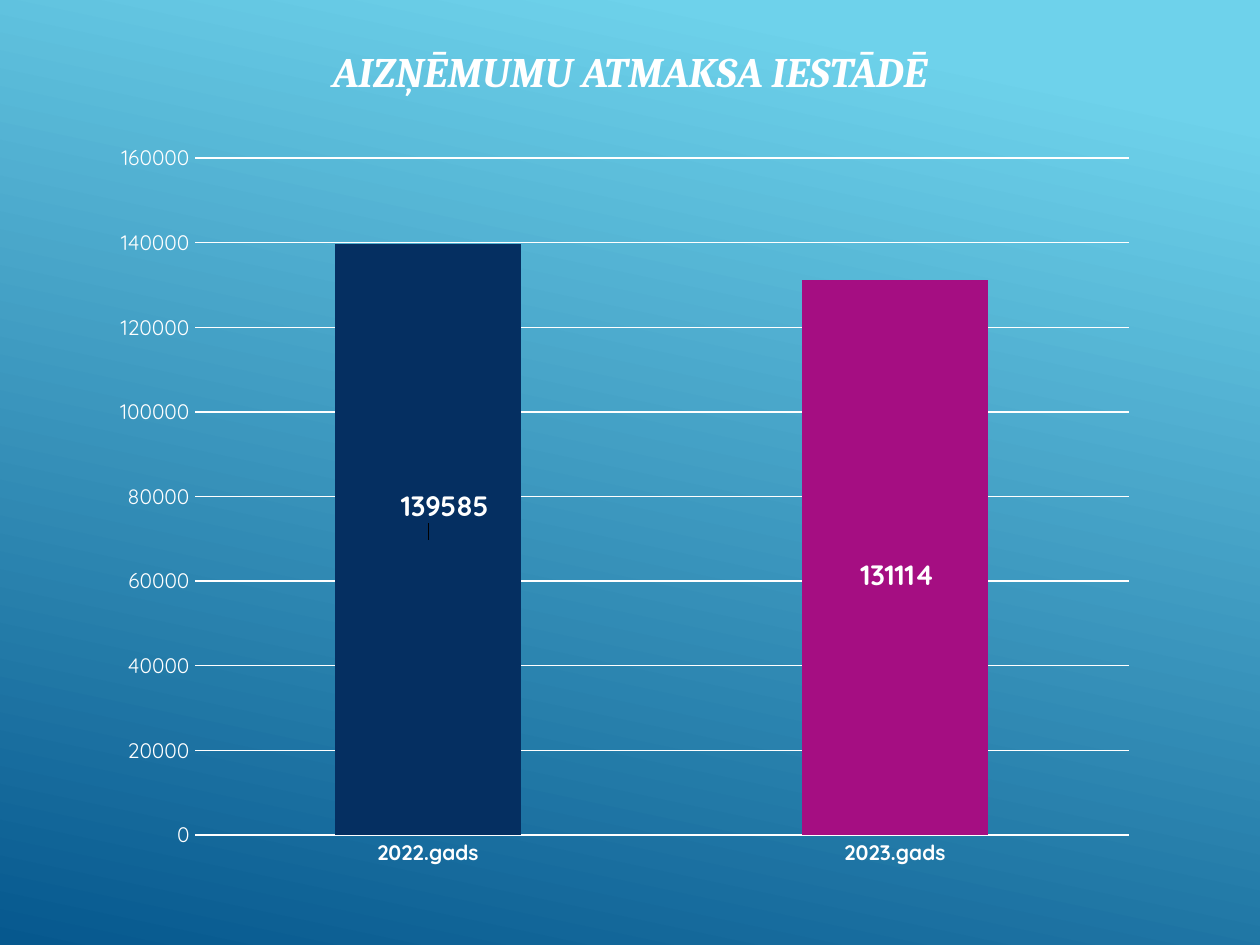
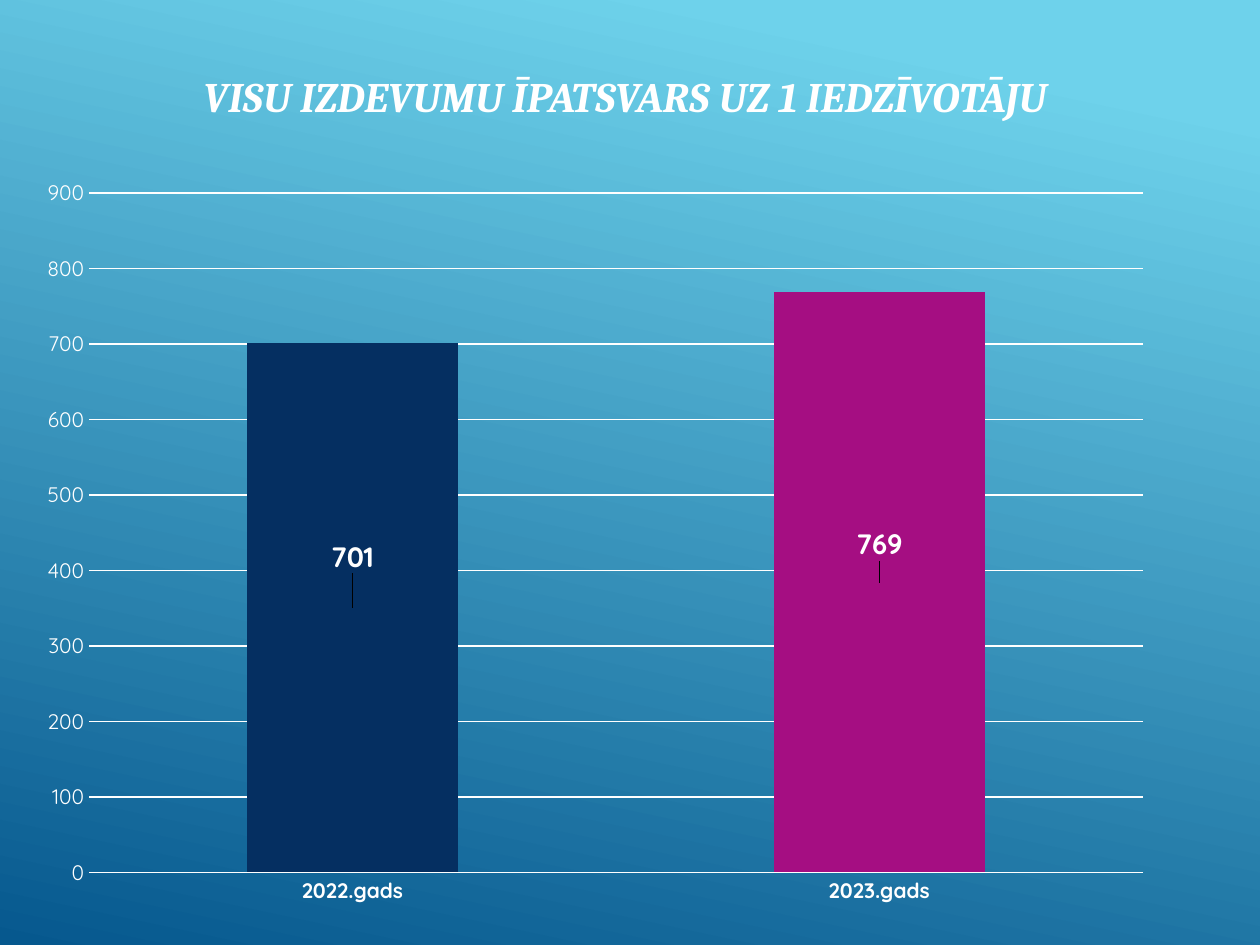
from dataclasses import dataclass

import lxml.etree
import pptx
import pptx.chart.data
import pptx.dml.color
import pptx.enum.chart
import pptx.enum.text
import pptx.oxml
import pptx.oxml.ns
import pptx.util
from pptx.util import Inches

WHITE, NAVY, MAGENTA = "FFFFFF", "052F61", "A50E82"
SKY, DEEP_BLUE = "6ED2EB", "06588E"
TITLE_FONT, CHART_FONT = "Cambria", "Quicksand"
YEARS = ("2022.gads", "2023.gads")
BAR_COLOURS = (NAVY, MAGENTA)


@dataclass(frozen=True)
class Box:
    left: float
    top: float
    width: float
    height: float

    def lengths(self) -> tuple:
        return tuple(Inches(v) for v in (self.left, self.top, self.width, self.height))


@dataclass(frozen=True)
class YearComparison:
    title: str
    title_box: Box
    chart_box: Box
    plot: Box
    values: tuple[int, int]
    axis_max: int
    axis_step: int
    label_shifts: tuple[tuple[float, float], tuple[float, float]]


COMPARISONS = (
    YearComparison(
        "AIZŅĒMUMU ATMAKSA IESTĀDĒ",
        Box(0.47, 0.09, 9.06, 0.94), Box(0.2, 1.15, 8.9, 5.91),
        Box(0.151, 0.017, 0.833, 0.91),
        (139585, 131114), 160000, 20000, ((0.015, -0.045), (0.002, 0.024)),
    ),
    YearComparison(
        "VISU IZDEVUMU ĪPATSVARS UZ 1 IEDZĪVOTĀJU",
        Box(0.59, 0.21, 8.74, 1.1), Box(0.2, 1.31, 9.06, 5.98),
        Box(0.056, 0.037, 0.923, 0.902),
        (701, 769), 900, 100, ((0, -0.068), (0, -0.05)),
    ),
)


def rgb(colour: str) -> pptx.dml.color.RGBColor:
    return pptx.dml.color.RGBColor.from_string(colour)


def style_font(font, name: str, size: float, bold: bool = False, italic: bool = False) -> None:
    font.name = name
    font.size = pptx.util.Pt(size)
    font.bold = bold
    font.italic = italic
    font.color.rgb = rgb(WHITE)


def manual_layout(**settings):
    layout = pptx.oxml.parse_xml(f"<c:layout {pptx.oxml.ns.nsdecls('c')}/>")
    qn = pptx.oxml.ns.qn
    manual = lxml.etree.SubElement(layout, qn("c:manualLayout"))
    for tag, value in settings.items():
        lxml.etree.SubElement(manual, qn(f"c:{tag}")).set("val", str(value))
    return layout


def paint_background(s) -> None:
    fill = s.background.fill
    fill.gradient()
    fill.gradient_angle = 360 - 102
    for stop, colour, position in zip(fill.gradient_stops, (SKY, DEEP_BLUE), (0.1, 1.0)):
        stop.color.rgb = rgb(colour)
        stop.position = position


def add_title(s, text: str, box: Box) -> None:
    tf = s.shapes.add_textbox(*box.lengths()).text_frame
    tf.word_wrap = True
    tf.vertical_anchor = pptx.enum.text.MSO_ANCHOR.MIDDLE
    p = tf.paragraphs[0]
    p.alignment = pptx.enum.text.PP_ALIGN.CENTER
    r = p.add_run()
    r.text = text
    style_font(r.font, TITLE_FONT, 24, bold=True, italic=True)


def style_axes(chart, comparison: YearComparison) -> None:
    for axis, bold in ((chart.category_axis, True), (chart.value_axis, False)):
        axis.major_tick_mark = pptx.enum.chart.XL_TICK_MARK.NONE
        axis.minor_tick_mark = pptx.enum.chart.XL_TICK_MARK.NONE
        axis.format.line.fill.background()
        style_font(axis.tick_labels.font, CHART_FONT, 12, bold=bold)
    axis = chart.value_axis
    axis.minimum_scale = 0
    axis.maximum_scale = comparison.axis_max
    axis.major_unit = comparison.axis_step
    axis.has_major_gridlines = True
    line = axis.major_gridlines.format.line
    line.color.rgb = rgb(WHITE)
    line.width = pptx.util.Pt(0.75)


def style_bars(plot, comparison: YearComparison) -> None:
    plot.gap_width = 150
    plot.vary_by_categories = False
    series = plot.series[0]
    series.format.fill.solid()
    series.format.fill.fore_color.rgb = rgb(NAVY)
    for i, (colour, (dx, dy)) in enumerate(zip(BAR_COLOURS, comparison.label_shifts)):
        point = series.points[i]
        point.format.fill.solid()
        point.format.fill.fore_color.rgb = rgb(colour)
        label = point.data_label
        style_font(label.font, CHART_FONT, 16, bold=True)
        label.position = pptx.enum.chart.XL_LABEL_POSITION.CENTER
    for node, (dx, dy) in zip(plot._element.xpath(".//c:dLbl"), comparison.label_shifts):
        node.xpath("c:idx")[0].addnext(manual_layout(x=dx, y=dy))


def add_chart(s, comparison: YearComparison) -> None:
    data = pptx.chart.data.CategoryChartData()
    data.categories = YEARS
    data.add_series("Series 1", comparison.values)
    chart = s.shapes.add_chart(
        pptx.enum.chart.XL_CHART_TYPE.COLUMN_CLUSTERED,
        *comparison.chart_box.lengths(), data,
    ).chart
    chart.has_title = False
    chart.has_legend = False
    style_font(chart.font, CHART_FONT, 10)
    style_axes(chart, comparison)
    style_bars(chart.plots[0], comparison)
    area = chart._chartSpace.xpath("c:chart/c:plotArea")[0]
    for old in area.xpath("c:layout"):
        area.remove(old)
    box = comparison.plot
    area.insert(0, manual_layout(
        layoutTarget="inner", xMode="edge", yMode="edge",
        x=box.left, y=box.top, w=box.width, h=box.height,
    ))


def main() -> None:
    prs = pptx.Presentation()
    prs.slide_width, prs.slide_height = Inches(10), Inches(7.5)
    for comparison in COMPARISONS:
        s = prs.slides.add_slide(prs.slide_layouts[6])
        paint_background(s)
        add_title(s, comparison.title, comparison.title_box)
        add_chart(s, comparison)
    prs.save("out.pptx")


if __name__ == "__main__":
    main()
